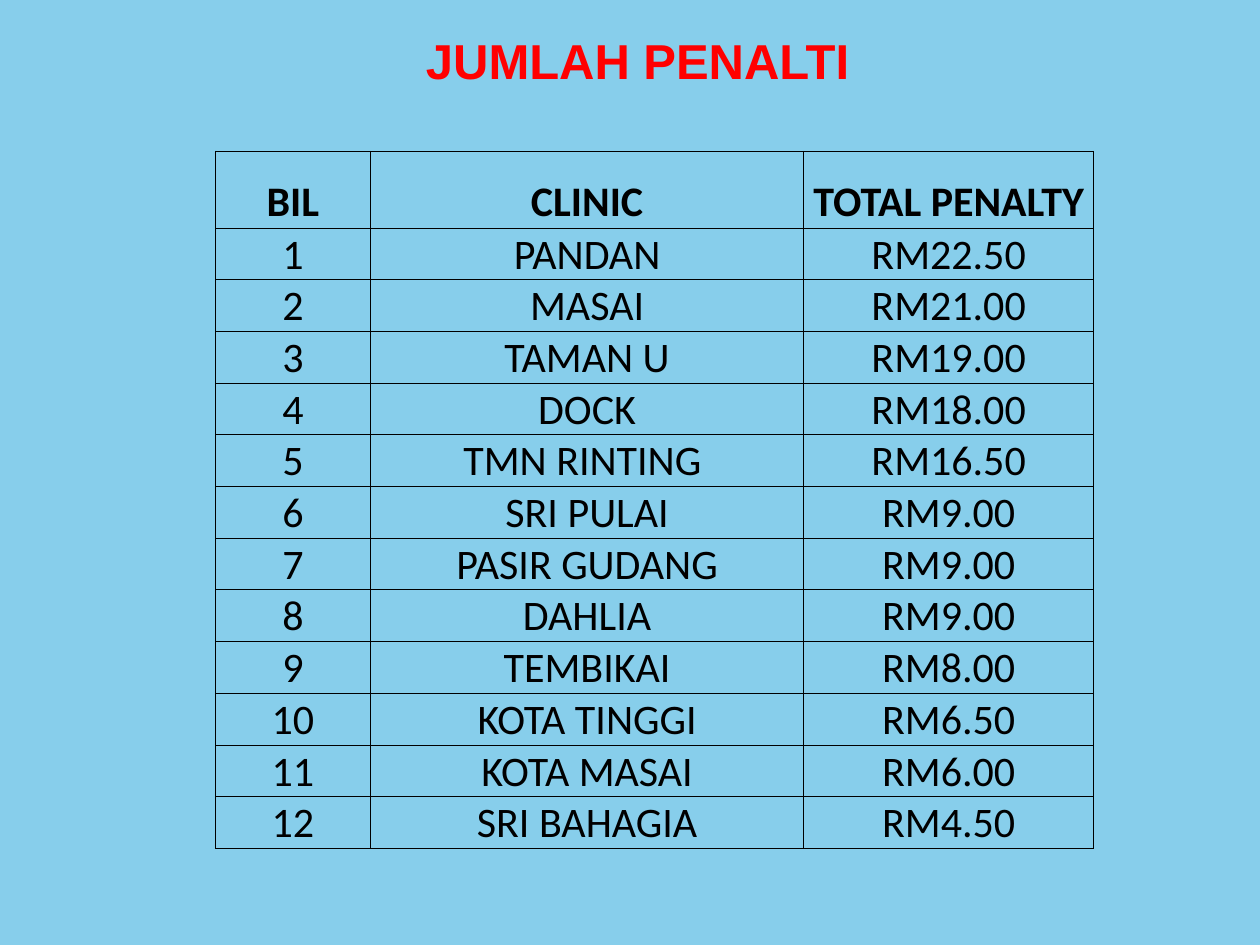
from lxml import etree
from pptx import Presentation
from pptx.dml.color import RGBColor
from pptx.enum.text import MSO_ANCHOR, PP_ALIGN
from pptx.oxml.ns import qn
from pptx.util import Inches, Pt

COLORS = {"sky": "87CEEB", "title": "FF0000", "ink": "000000"}
COLUMN_WIDTHS = [1.23, 3.44, 2.3]
HEADER_HEIGHT, ROW_HEIGHT = 0.61, 0.38
HEADERS = ["BIL", "CLINIC", "TOTAL PENALTY"]
PENALTIES = [
    ("PANDAN", 22.5),
    ("MASAI", 21),
    ("TAMAN U", 19),
    ("DOCK", 18),
    ("TMN RINTING ", 16.5),
    ("SRI PULAI", 9),
    ("PASIR GUDANG", 9),
    ("DAHLIA", 9),
    ("TEMBIKAI", 8),
    ("KOTA TINGGI", 6.5),
    ("KOTA MASAI", 6),
    ("SRI BAHAGIA", 4.5),
]


def style(p, font, size, color, bold):
    p.alignment = PP_ALIGN.CENTER
    p.font.name = font
    p.font.size = Pt(size)
    p.font.bold = bold
    p.font.color.rgb = RGBColor.from_string(COLORS[color])


def add_borders(cell):
    """Draw a thin line on all four sides; lines must precede the fill."""
    tcPr = cell._tc.get_or_add_tcPr()
    for i, side in enumerate(("a:lnL", "a:lnR", "a:lnT", "a:lnB")):
        ln = etree.Element(qn(side), w=str(Pt(0.5)))
        fill = etree.SubElement(ln, qn("a:solidFill"))
        etree.SubElement(fill, qn("a:srgbClr"), val=COLORS["ink"])
        tcPr.insert(i, ln)


prs = Presentation()
prs.slide_width, prs.slide_height = Inches(10), Inches(7.5)
s = prs.slides.add_slide(prs.slide_layouts[6])
s.background.fill.solid()
s.background.fill.fore_color.rgb = RGBColor.from_string(COLORS["sky"])

# Title
title = s.shapes.add_textbox(Inches(1.39), Inches(0.19), Inches(7.34), Inches(0.55))
tf = title.text_frame
tf.word_wrap = True
p = tf.paragraphs[0]
p.text = "JUMLAH PENALTI"
style(p, "Arial", 28, "title", True)

# Penalty table
rows = [HEADERS] + [
    [str(number), clinic, f"RM{amount:.2f}"]
    for number, (clinic, amount) in enumerate(PENALTIES, 1)
]
table = s.shapes.add_table(
    len(rows), len(HEADERS), Inches(1.71), Inches(1.2),
    Inches(sum(COLUMN_WIDTHS)), Inches(HEADER_HEIGHT + ROW_HEIGHT * len(PENALTIES)),
).table
table.horz_banding = False
for column, width in zip(table.columns, COLUMN_WIDTHS):
    column.width = Inches(width)

for r, values in enumerate(rows):
    table.rows[r].height = Inches(ROW_HEIGHT if r else HEADER_HEIGHT)
    for c, value in enumerate(values):
        cell = table.cell(r, c)
        cell.fill.background()
        cell.vertical_anchor = MSO_ANCHOR.BOTTOM
        cell.margin_left = cell.margin_right = cell.margin_top = Inches(0.01)
        cell.margin_bottom = 0
        cell.text = value
        style(cell.text_frame.paragraphs[0], "Calibri", 24, "ink", r == 0)
        add_borders(cell)

prs.save("out.pptx")
